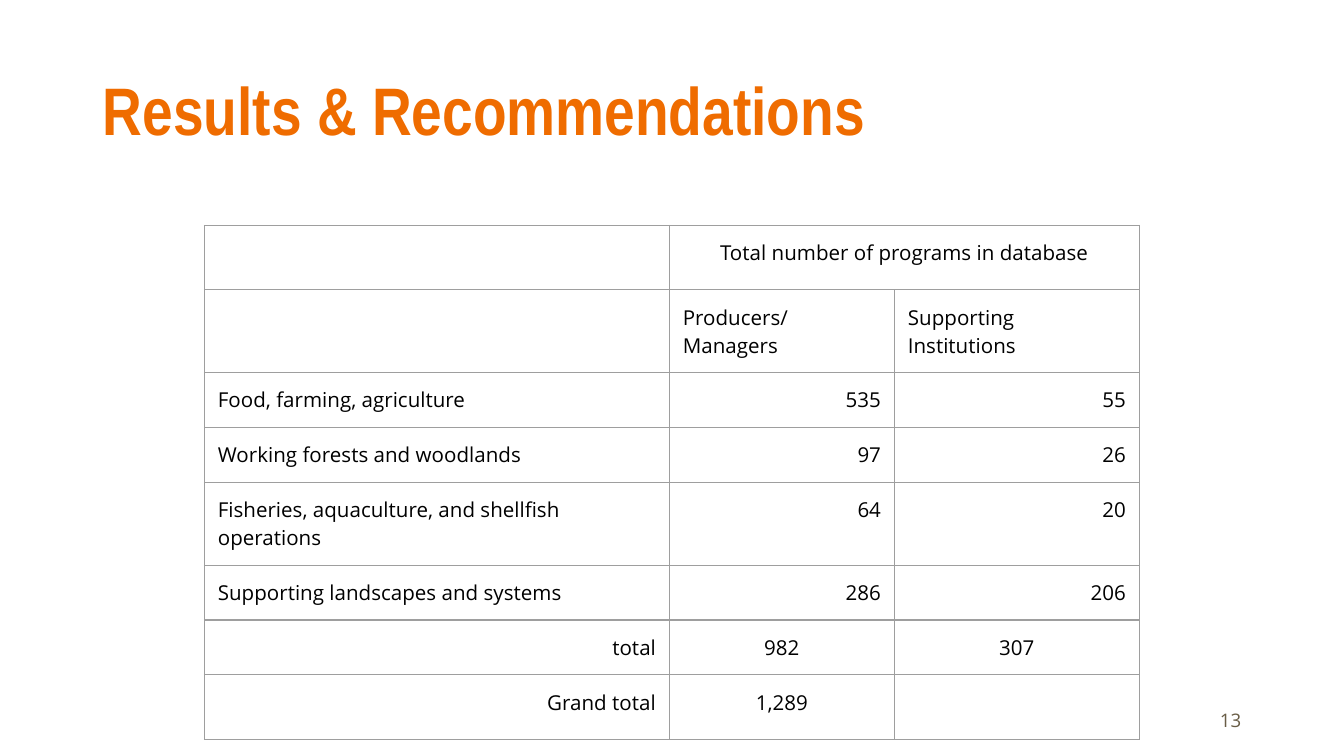
from typing import NamedTuple

from lxml.etree import SubElement
from pptx import Presentation
from pptx.dml.color import RGBColor
from pptx.enum.text import MSO_ANCHOR, PP_ALIGN as Align
from pptx.oxml import parse_xml
from pptx.oxml.ns import nsdecls, qn
from pptx.util import Pt

ORANGE = RGBColor(0xEF, 0x6C, 0x00)
BROWN = RGBColor(0x69, 0x5D, 0x46)
BLACK = RGBColor(0, 0, 0)
GREY = RGBColor(0x9E, 0x9E, 0x9E)

BODY_FONT = "Open Sans"
TABLE_SIZE = 11
CELL_MARGIN = Pt(7.2)
BORDER_WIDTH = Pt(0.75)
COLUMN_WIDTHS = (249.1, 120.6, 131.2)


class Style(NamedTuple):
    font: str
    size: float
    color: RGBColor
    bold: bool = False


class Label(NamedTuple):
    text: str
    left: float
    top: float
    width: float
    height: float
    style: Style
    align: Align = Align.LEFT
    line_spacing: float = 1.0


class Row(NamedTuple):
    height: float
    texts: tuple[str, str, str]
    aligns: tuple[Align, Align, Align]


LABELS = (
    Label("Results & Recommendations", 49.7, 21.6, 620.6, 78.5,
          Style("Arial Narrow", 36, ORANGE, bold=True), line_spacing=0.9),
    Label("13", 508.3, 375.1, 162, 21.6, Style(BODY_FONT, 10, BROWN), Align.RIGHT),
)
TABLE_STYLE = Style(BODY_FONT, TABLE_SIZE, BLACK)

HEADING = (Align.LEFT, Align.LEFT, Align.LEFT)
FIGURES = (Align.LEFT, Align.RIGHT, Align.RIGHT)
TOTALS = (Align.RIGHT, Align.CENTER, Align.CENTER)
ROWS = (
    Row(34.4, ("", "Total number of programs in database", ""),
        (Align.LEFT, Align.CENTER, Align.LEFT)),
    Row(44.4, ("", "Producers/Managers", "Supporting Institutions"), HEADING),
    Row(29.4, ("Food, farming, agriculture", "535", "55"), FIGURES),
    Row(29.4, ("Working forests and woodlands", "97", "26"), FIGURES),
    Row(44.4, ("Fisheries, aquaculture, and shellfish operations", "64", "20"), FIGURES),
    Row(29.4, ("Supporting landscapes and systems", "286", "206"), FIGURES),
    Row(29.4, ("total", "982", "307"), TOTALS),
    Row(34.6, ("Grand total", "1,289", ""), TOTALS),
)


def write(text_frame, text: str, style: Style, align: Align) -> None:
    text_frame.text = text
    paragraph = text_frame.paragraphs[0]
    paragraph.alignment = align
    for run in paragraph.runs:
        run.font.name = style.font
        run.font.size = Pt(style.size)
        run.font.bold = style.bold
        run.font.color.rgb = style.color


def add_label(slide, label: Label) -> None:
    box = slide.shapes.add_textbox(
        Pt(label.left), Pt(label.top), Pt(label.width), Pt(label.height))
    frame = box.text_frame
    frame.word_wrap = True
    frame.vertical_anchor = MSO_ANCHOR.MIDDLE
    frame.margin_left = frame.margin_right = Pt(5.4)
    frame.margin_top = frame.margin_bottom = Pt(2.7)
    write(frame, label.text, label.style, label.align)
    frame.paragraphs[0].line_spacing = label.line_spacing


def set_borders(cell) -> None:
    """Draw all four sides; the lines must come before the cell's fill."""
    properties = cell._tc.get_or_add_tcPr()
    for index, side in enumerate(("lnL", "lnR", "lnT", "lnB")):
        properties.insert(index, parse_xml(
            f'<a:{side} {nsdecls("a")} w="{BORDER_WIDTH}">'
            f'<a:solidFill><a:srgbClr val="{GREY}"/></a:solidFill></a:{side}>'))


def fill_cell(cell, text: str, align: Align) -> None:
    cell.fill.background()
    cell.margin_left = cell.margin_right = CELL_MARGIN
    cell.margin_top = cell.margin_bottom = CELL_MARGIN
    write(cell.text_frame, text, TABLE_STYLE, align)
    if not text:  # keeps an empty cell from stretching its row
        SubElement(cell.text_frame.paragraphs[0]._p, qn("a:endParaRPr"),
                   sz=str(TABLE_SIZE * 100))
    set_borders(cell)


def add_program_table(slide) -> None:
    frame = slide.shapes.add_table(
        len(ROWS), len(COLUMN_WIDTHS), Pt(109.5), Pt(120.8),
        Pt(sum(COLUMN_WIDTHS)), Pt(sum(row.height for row in ROWS)))
    table = frame.table
    table.first_row = table.horz_banding = False
    for column, width in zip(table.columns, COLUMN_WIDTHS):
        column.width = Pt(width)
    for row_index, row in enumerate(ROWS):
        table.rows[row_index].height = Pt(row.height)
        for column_index, (text, align) in enumerate(zip(row.texts, row.aligns)):
            fill_cell(table.cell(row_index, column_index), text, align)
    table.cell(0, 1).merge(table.cell(0, 2))


def main() -> None:
    presentation = Presentation()
    presentation.slide_width = Pt(720)
    presentation.slide_height = Pt(405)
    slide = presentation.slides.add_slide(presentation.slide_layouts[6])
    for label in LABELS:
        add_label(slide, label)
    add_program_table(slide)
    presentation.save("out.pptx")


if __name__ == "__main__":
    main()
